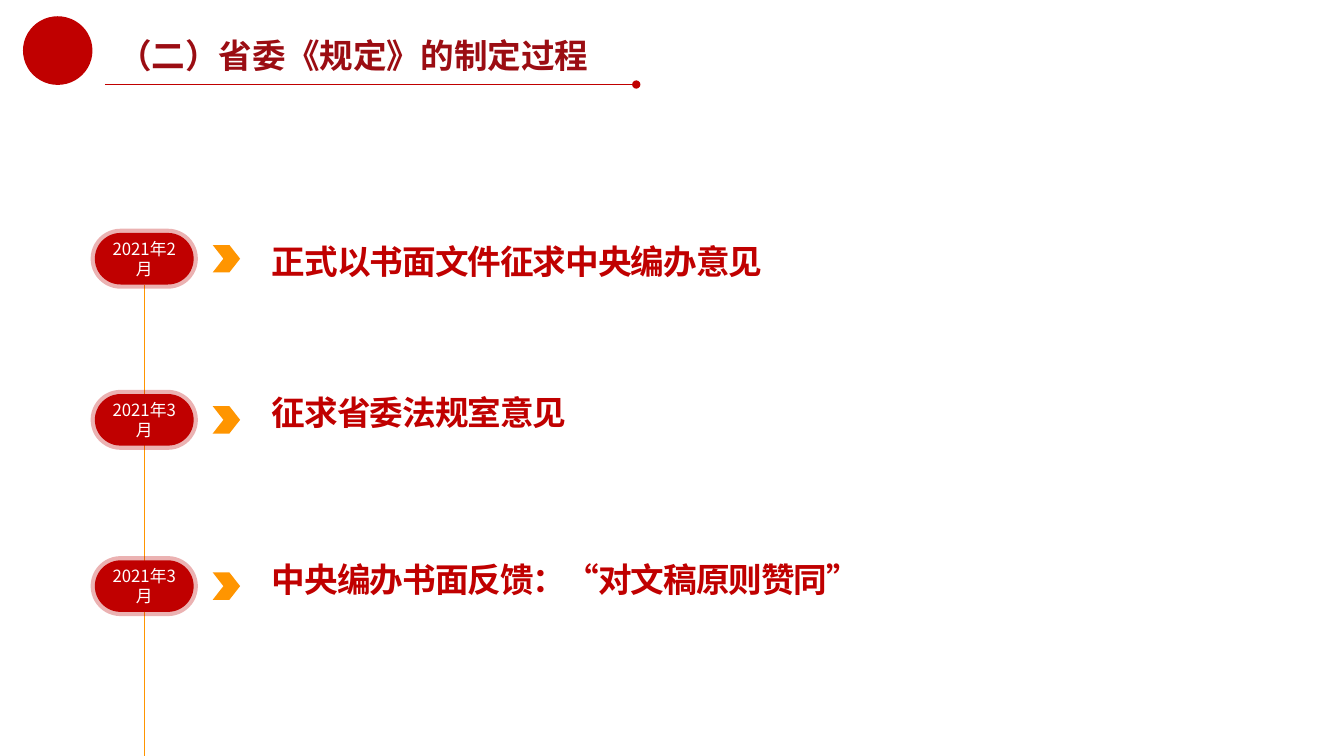
from lxml.etree import SubElement
from pptx import Presentation
from pptx.dml.color import RGBColor
from pptx.enum.shapes import MSO_CONNECTOR as CONN, MSO_SHAPE as SHAPE
from pptx.enum.text import MSO_ANCHOR as ANCHOR, MSO_AUTO_SIZE as AUTO, PP_ALIGN as ALIGN
from pptx.oxml.ns import qn
from pptx.util import Cm, Pt

TITLE = "（二）省委《规定》的制定过程"
STEPS = [
    {"date": "2021年2月", "text": "正式以书面文件征求中央编办意见", "pill_y": 5.87, "text_y": 5.79, "text_w": 17.86, "text_h": 1.42, "spacing": 33},
    {"date": "2021年3月", "text": "征求省委法规室意见", "pill_y": 9.93, "text_y": 9.93, "text_w": 23.88, "text_h": 1.12, "spacing": 24},
    {"date": "2021年3月", "text": "中央编办书面反馈：“对文稿原则赞同”", "pill_y": 14.12, "text_y": 14.12, "text_w": 21.34, "text_h": 1.12, "spacing": 24},
]
COLORS = {"red": "C00000", "title": "9B0D13", "orange": "FF9500", "white": "FFFFFF"}
FONT = "Noto Sans CJK SC"
SLIDE_W, SLIDE_H = 33.86, 19.05
PILL_X, PILL_W, PILL_H = 2.39, 2.49, 1.3
ARROW_X, ARROW_SIZE = 5.36, 0.69
TEXT_X = 6.6
RULE_Y = 2.13


def rgb(name):
    return RGBColor.from_string(COLORS[name])


def add_run(p, text, size, color, bold=False, spacing=None):
    r = p.add_run()
    r.text = text
    r.font.size = Pt(size)
    r.font.bold = bold
    r.font.color.rgb = rgb(color)
    r.font.name = FONT
    rpr = r.font._element
    SubElement(rpr, qn("a:ea")).set("typeface", FONT)
    if spacing is not None:
        rpr.set("spc", str(spacing))


def add_line(slide, x1, y1, x2, y2, color, width):
    line = slide.shapes.add_connector(CONN.STRAIGHT, Cm(x1), Cm(y1), Cm(x2), Cm(y2))
    line.line.color.rgb = rgb(color)
    line.line.width = Pt(width)
    SubElement(line._element.spPr, qn("a:effectLst"))
    return line


def add_solid(slide, kind, x, y, w, h, color):
    sp = slide.shapes.add_shape(kind, Cm(x), Cm(y), Cm(w), Cm(h))
    sp.shadow.inherit = False
    sp.fill.solid()
    sp.fill.fore_color.rgb = rgb(color)
    sp.line.fill.background()
    return sp


def add_title(slide):
    sp = slide.shapes.title
    sp.left, sp.top, sp.width, sp.height = Cm(2.72), Cm(0.86), Cm(13), Cm(1.52)
    tf = sp.text_frame
    tf.auto_size = AUTO.NONE
    tf.vertical_anchor = ANCHOR.TOP
    p = tf.paragraphs[0]
    p.alignment = ALIGN.LEFT
    p.line_spacing = 0.9
    add_run(p, TITLE, 24, "title", bold=True)


def add_header(slide):
    add_solid(slide, SHAPE.OVAL, 0.58, 0.41, 1.75, 1.73, "red")
    rule = add_line(slide, 2.64, RULE_Y, 16.03, RULE_Y, "red", 0.75)
    SubElement(rule.line._ln, qn("a:tailEnd")).set("type", "oval")
    add_title(slide)


def add_pill(slide, step):
    sp = add_solid(slide, SHAPE.ROUNDED_RECTANGLE, PILL_X, step["pill_y"], PILL_W, PILL_H, "red")
    sp.adjustments[0] = 0.5
    sp.line.color.rgb = rgb("red")
    sp.line.width = Pt(6)
    line_color = sp.line._ln.find(".//" + qn("a:srgbClr"))
    SubElement(line_color, qn("a:alpha")).set("val", "30000")
    tf = sp.text_frame
    tf.word_wrap = True
    tf.vertical_anchor = ANCHOR.MIDDLE
    p = tf.paragraphs[0]
    p.alignment = ALIGN.CENTER
    add_run(p, step["date"], 12, "white")
    return sp


def add_step(slide, step):
    box = slide.shapes.add_textbox(Cm(TEXT_X), Cm(step["text_y"]), Cm(step["text_w"]), Cm(step["text_h"]))
    tf = box.text_frame
    tf.word_wrap = True
    tf.auto_size = AUTO.SHAPE_TO_FIT_TEXT
    p = tf.paragraphs[0]
    p.alignment = ALIGN.JUSTIFY
    p.line_spacing = Pt(step["spacing"])
    add_run(p, step["text"], 24, "red", bold=True, spacing=-70)
    pill = add_pill(slide, step)
    arrow_y = step["pill_y"] + (PILL_H - ARROW_SIZE) / 2
    arrow = add_solid(slide, SHAPE.CHEVRON, ARROW_X, arrow_y, ARROW_SIZE, ARROW_SIZE, "orange")
    arrow.adjustments[0] = 0.39
    return pill


def main():
    prs = Presentation()
    prs.slide_width, prs.slide_height = Cm(SLIDE_W), Cm(SLIDE_H)
    slide = prs.slides.add_slide(prs.slide_layouts[5])
    add_header(slide)
    axis_x = PILL_X + PILL_W / 2
    axis = add_line(slide, axis_x, STEPS[0]["pill_y"] + PILL_H, axis_x, SLIDE_H, "orange", 0.5)
    pills = [add_step(slide, step) for step in STEPS]
    axis.begin_connect(pills[0], 2)
    prs.save("out.pptx")


if __name__ == "__main__":
    main()
